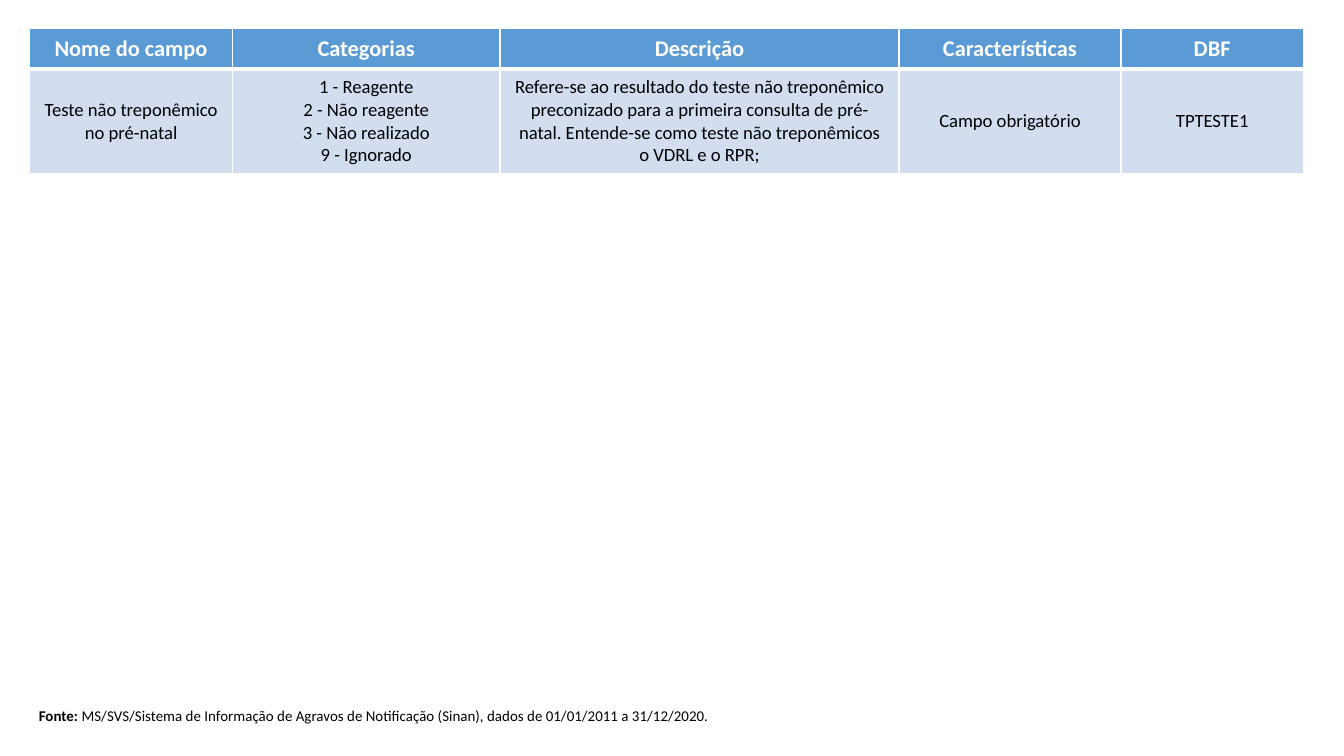
import pptx
import pptx.dml.color
import pptx.enum.text
import pptx.oxml
import pptx.oxml.ns
import pptx.util

Inches = pptx.util.Inches
Pt = pptx.util.Pt

HEADERS = ["Nome do campo", "Categorias", "Descrição", "Características", "DBF"]
FIELD = [
    "Teste não treponêmico no pré-natal",
    "1 - Reagente\n2 - Não reagente\n3 - Não realizado\n9 - Ignorado",
    "Refere-se ao resultado do teste não treponêmico preconizado para a primeira "
    "consulta de pré-natal. Entende-se como teste não treponêmicos o VDRL e o RPR;",
    "Campo obrigatório",
    "TPTESTE1",
]
SOURCE = [
    ("Fonte: ", True),
    ("MS/SVS/Sistema de Informação de Agravos de Notificação (Sinan), "
     "dados de 01/01/2011 a 31/12/2020.", False),
]
COLUMN_WIDTHS = [1.51, 1.99, 2.97, 1.65, 1.36]
ROW_HEIGHTS = [0.29, 0.78]

THEME = {
    "font": "Calibri",
    "border": "FFFFFF",
    "header": {"fill": "5B9BD5", "color": "FFFFFF", "size": 12, "bold": True,
               "borders": {"lnL": 1, "lnR": 1, "lnT": 1, "lnB": 3}},
    "body": {"fill": "D2DEEF", "color": "000000", "size": 10, "bold": False,
             "borders": {"lnL": 1, "lnR": 1, "lnT": 3, "lnB": 1}},
    "source": {"color": "000000", "size": 8},
}


def rgb(value):
    return pptx.dml.color.RGBColor.from_string(value)


def style_font(font, style, bold):
    font.name = THEME["font"]
    font.size = Pt(style["size"])
    font.color.rgb = rgb(style["color"])
    font.bold = bold


def set_borders(cell, widths):
    properties = cell._tc.get_or_add_tcPr()
    for side, width in widths.items():
        properties.append(pptx.oxml.parse_xml(
            f'<a:{side} {pptx.oxml.ns.nsdecls("a")} w="{Pt(width)}"><a:solidFill>'
            f'<a:srgbClr val="{THEME["border"]}"/></a:solidFill></a:{side}>'))


def fill_cell(cell, text, style):
    set_borders(cell, style["borders"])
    cell.fill.solid()
    cell.fill.fore_color.rgb = rgb(style["fill"])
    cell.vertical_anchor = pptx.enum.text.MSO_ANCHOR.MIDDLE
    cell.text_frame.text = text
    for paragraph in cell.text_frame.paragraphs:
        paragraph.alignment = pptx.enum.text.PP_ALIGN.CENTER
        for run in paragraph.runs:
            style_font(run.font, style, style["bold"])


def add_field_table(slide):
    rows = [(HEADERS, THEME["header"]), (FIELD, THEME["body"])]
    table = slide.shapes.add_table(
        len(rows), len(HEADERS), Inches(0.22), Inches(0.21),
        Inches(sum(COLUMN_WIDTHS)), Inches(sum(ROW_HEIGHTS))).table
    for column, width in zip(table.columns, COLUMN_WIDTHS):
        column.width = Inches(width)
    for row, height, (texts, style) in zip(table.rows, ROW_HEIGHTS, rows):
        row.height = Inches(height)
        for cell, text in zip(row.cells, texts):
            fill_cell(cell, text, style)


def add_source(slide):
    text_box = slide.shapes.add_textbox(
        Inches(0.19), Inches(5.21), Inches(5.38), Inches(0.24))
    text_frame = text_box.text_frame
    text_frame.word_wrap = True
    text_frame.auto_size = pptx.enum.text.MSO_AUTO_SIZE.SHAPE_TO_FIT_TEXT
    for text, bold in SOURCE:
        run = text_frame.paragraphs[0].add_run()
        run.text = text
        style_font(run.font, THEME["source"], bold)


def main():
    presentation = pptx.Presentation()
    presentation.slide_width = Inches(10)
    presentation.slide_height = Inches(10) * 9 // 16
    slide = presentation.slides.add_slide(presentation.slide_layouts[6])
    add_field_table(slide)
    add_source(slide)
    presentation.save("out.pptx")


if __name__ == "__main__":
    main()
